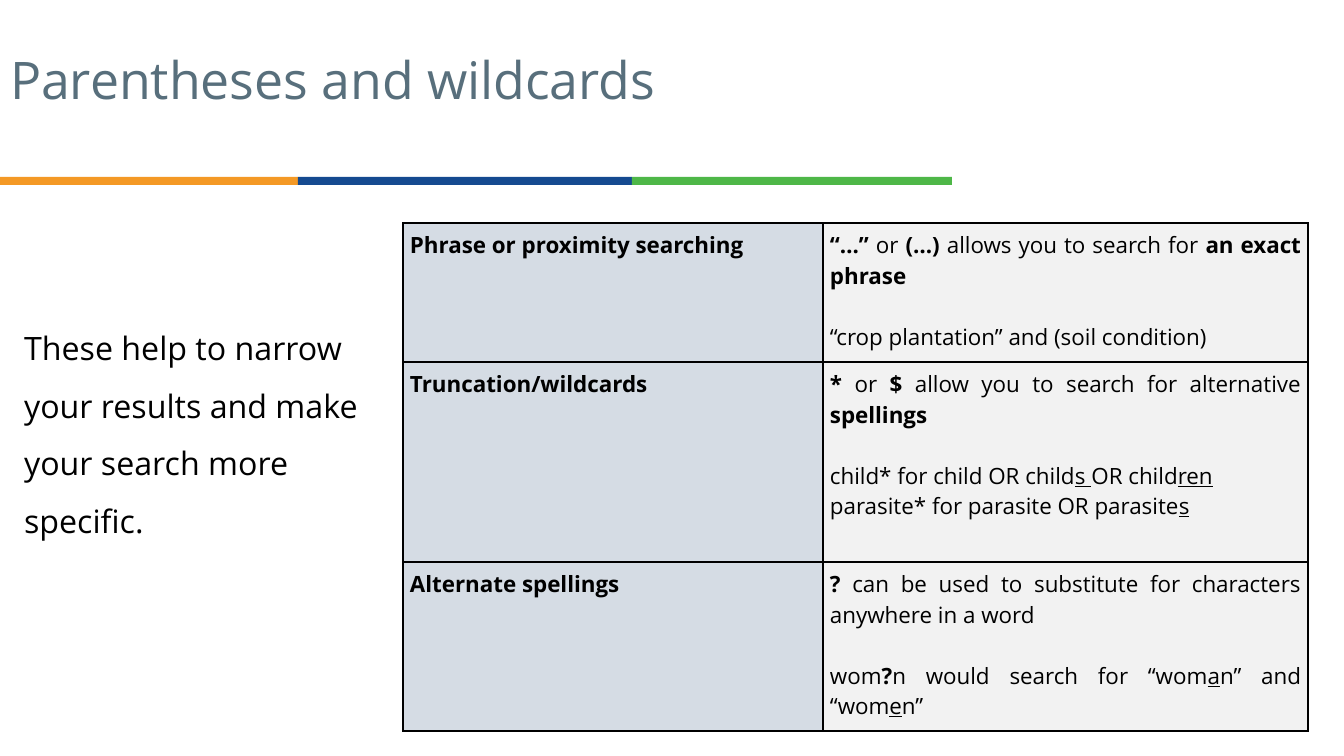
from lxml.etree import SubElement
from pptx import Presentation
from pptx.dml.color import RGBColor
from pptx.enum.shapes import MSO_SHAPE as Shape
from pptx.enum.text import MSO_ANCHOR as Anchor, MSO_AUTO_SIZE as AutoSize, PP_ALIGN as Align
from pptx.oxml.ns import qn
from pptx.util import Pt

COLORS = {"slate": "586F7C", "black": "000000", "orange": "F49925", "blue": "154A90",
          "green": "4EB748", "label": "D5DCE4", "detail": "F2F2F2"}
FONT = "Open Sans"
PX = 914400 / 100.8

TITLE = "Parentheses and wildcards"
BODY = "These help to narrow your results and make your search more specific."
STRIPES = [("orange", 298), ("blue", 334), ("green", 320)]
COLUMNS = [420, 485]
ROWS = [
    (139, "Phrase or proximity searching", [
        [("“…”", "b"), (" or", ""), (" (…) ", "b"), ("allows you to search for ", ""),
         ("an exact phrase", "b")],
        [("“crop plantation” and (soil condition)", "")],
    ]),
    (200, "Truncation/wildcards", [
        [("*", "b"), (" or ", ""), ("$ ", "b"), ("allow you to search for alternative", ""),
         (" spellings", "b")],
        [("child* for child OR child", ""), ("s ", "u"), ("OR child", ""), ("ren", "u")],
        [("parasite* for parasite OR parasite", ""), ("s", "u")],
    ]),
    (169, "Alternate spellings", [
        [("?", "b"), (" can be used to substitute for characters anywhere in a word", "")],
        [("wom", ""), ("?", "b"), ("n would search for “wom", ""), ("a", "u"),
         ("n” and “wom", ""), ("e", "u"), ("n”", "")],
    ]),
]


def px(value):
    return round(value * PX)


def color(name):
    return RGBColor.from_string(COLORS[name])


def write(frame, paras, size=16, ink="black", align=Align.LEFT, spacing=1.0, gap=0, indent=0):
    frame.word_wrap = True
    for index, spans in enumerate(paras):
        para = frame.paragraphs[0] if index == 0 else frame.add_paragraph()
        props = para._p.get_or_add_pPr()
        props.set("marL", str(px(indent)))
        props.set("indent", "0")
        SubElement(props, qn("a:buNone"))
        para.alignment = align
        para.line_spacing = spacing
        para.space_before = Pt(gap if index == 1 else 0)
        para.space_after = Pt(0)
        for text, style in spans:
            span = para.add_run()
            span.text = text
            span.font.name = FONT
            span.font.size = Pt(size)
            span.font.color.rgb = color(ink)
            span.font.bold = "b" in style
            span.font.underline = "u" in style


def place(box, left, top, width, height, anchor):
    box.left, box.top, box.width, box.height = map(px, (left, top, width, height))
    box.text_frame.auto_size = AutoSize.NONE
    box.text_frame.vertical_anchor = anchor


def fill_cell(cell, paras, fill):
    props = cell._tc.get_or_add_tcPr()
    for side in ("lnL", "lnR", "lnT", "lnB"):
        line = SubElement(props, qn(f"a:{side}"), w=str(Pt(1)))
        SubElement(SubElement(line, qn("a:solidFill")), qn("a:srgbClr"), val=COLORS["black"])
    cell.fill.solid()
    cell.fill.fore_color.rgb = color(fill)
    cell.margin_left = cell.margin_right = cell.margin_top = cell.margin_bottom = px(7)
    write(cell.text_frame, paras, align=Align.JUSTIFY, gap=21.8)


def main():
    deck = Presentation()
    deck.slide_width, deck.slide_height = px(1344), px(756)
    page = deck.slides.add_slide(deck.slide_layouts[1])

    left = 0
    for name, width in STRIPES:
        stripe = page.shapes.add_shape(Shape.RECTANGLE, px(left), px(177), px(width), px(8))
        stripe.shadow.inherit = False
        stripe.fill.solid()
        stripe.fill.fore_color.rgb = color(name)
        stripe.line.fill.background()
        left += width

    title, body = page.placeholders
    place(title, 0, 50, 898, 119, Anchor.TOP)
    write(title.text_frame, [[(TITLE, "")]], size=37, ink="slate", spacing=0.9)
    place(body, 0, 201, 403, 447, Anchor.MIDDLE)
    write(body.text_frame, [[(BODY, "")]], size=23, spacing=1.5, indent=14)

    heights = [height for height, _, _ in ROWS]
    table = page.shapes.add_table(len(ROWS), len(COLUMNS), px(403), px(223),
                                  px(sum(COLUMNS)), px(sum(heights))).table
    for column, width in zip(table.columns, COLUMNS):
        column.width = px(width)
    for index, (height, label, detail) in enumerate(ROWS):
        table.rows[index].height = px(height)
        fill_cell(table.cell(index, 0), [[(label, "b")]], "label")
        fill_cell(table.cell(index, 1), detail, "detail")

    deck.save("out.pptx")


if __name__ == "__main__":
    main()
